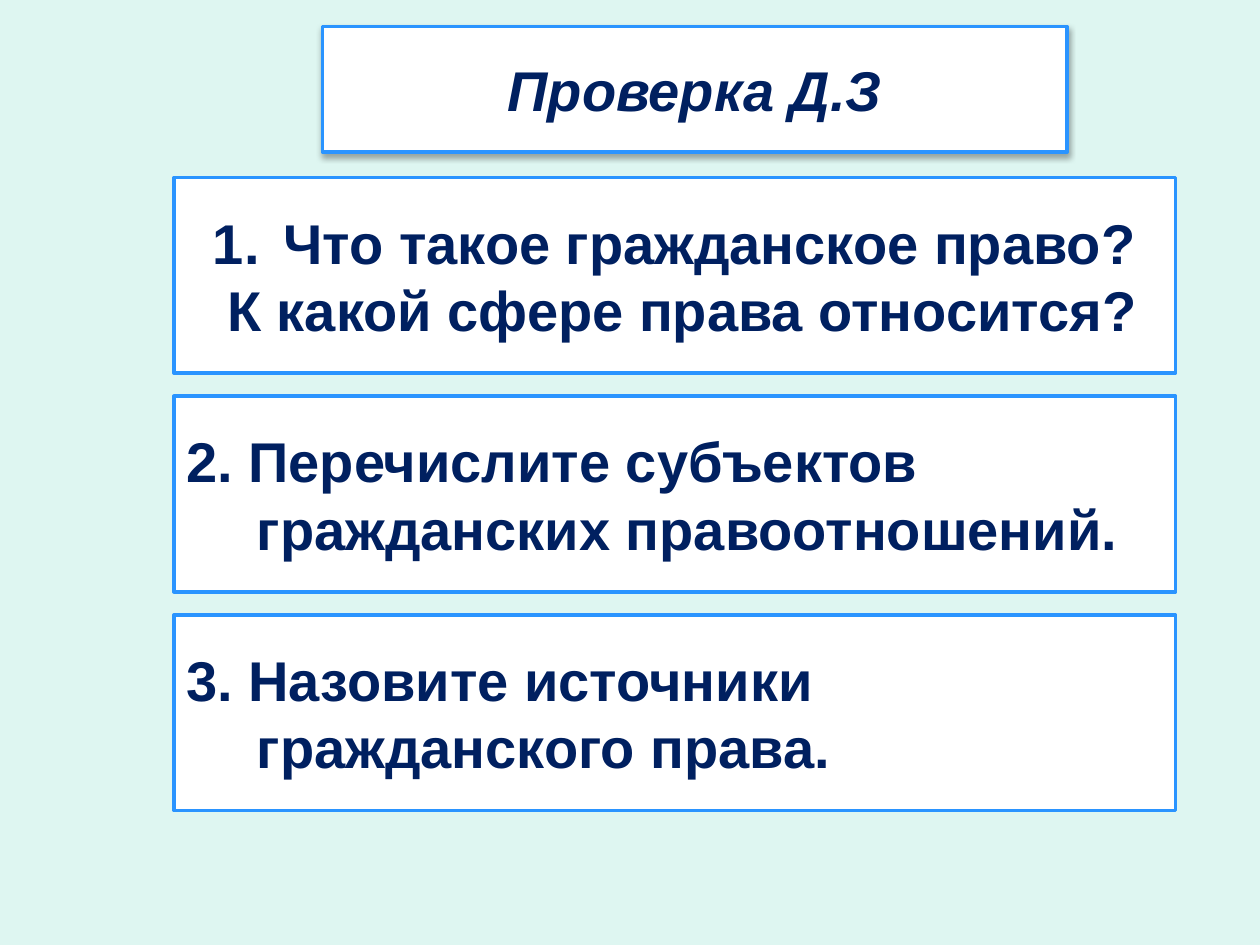
from dataclasses import dataclass
from typing import Any

from lxml.etree import SubElement
from pptx import Presentation
from pptx.dml.color import RGBColor
from pptx.enum.shapes import MSO_SHAPE
from pptx.enum.text import MSO_ANCHOR, MSO_AUTO_SIZE, PP_ALIGN
from pptx.oxml.ns import qn
from pptx.util import Inches, Pt

MINT = RGBColor(0xDE, 0xF6, 0xF1)
WHITE = RGBColor(0xFF, 0xFF, 0xFF)
BLUE = RGBColor(0x2A, 0x94, 0xFF)
NAVY = RGBColor(0x00, 0x20, 0x60)

WIDTH, HEIGHT = Inches(10), Inches(7.5)
LEFT, TOP, WIDE, HIGH = 0.138, 0.188, 0.795, 0.207
STEP = 0.2313
INDENT = Inches(0.56)

FONT = {"name": "Arial", "size": Pt(32), "bold": True}
FRAME = {
    "word_wrap": True,
    "auto_size": MSO_AUTO_SIZE.NONE,
    "vertical_anchor": MSO_ANCHOR.MIDDLE,
}


@dataclass(frozen=True)
class Card:
    lines: tuple[str, ...]
    align: PP_ALIGN = PP_ALIGN.LEFT
    auto: bool = False


CARDS = (
    Card(
        ("Что такое гражданское право?", " К какой сфере права относится?"),
        PP_ALIGN.CENTER,
        True,
    ),
    Card(("2. Перечислите субъектов гражданских правоотношений.",)),
    Card(("3. Назовите источники гражданского права.",)),
)


def apply(target: Any, values: dict[str, Any]) -> None:
    for name, value in values.items():
        setattr(target, name, value)


def place(shape: Any, left: float, top: float, wide: float, high: float) -> None:
    apply(shape, {
        "left": int(WIDTH * left),
        "top": int(HEIGHT * top),
        "width": int(WIDTH * wide),
        "height": int(HEIGHT * high),
    })


def style(shape: Any) -> None:
    shape.fill.solid()
    shape.fill.fore_color.rgb = WHITE
    shape.line.color.rgb = BLUE
    shape.line.width = Pt(2)
    apply(shape.text_frame, FRAME)


def write(para: Any, text: str, align: PP_ALIGN, italic: bool = False) -> None:
    para.alignment = align
    run = para.add_run()
    run.text = text
    apply(run.font, FONT | {"italic": italic})
    run.font.color.rgb = NAVY


def shade(shape: Any) -> None:
    effects = SubElement(shape.element.spPr, qn("a:effectLst"))
    outer = SubElement(
        effects, qn("a:outerShdw"), blurRad=str(Pt(3.5)), dist=str(Pt(2.2)),
        dir="5400000", rotWithShape="0",
    )
    color = SubElement(outer, qn("a:srgbClr"), val="000000")
    SubElement(color, qn("a:alpha"), val="32000")


def draw(slide: Any, card: Card, row: int) -> None:
    shape = slide.shapes.add_shape(MSO_SHAPE.RECTANGLE, 0, 0, 0, 0)
    place(shape, LEFT, TOP + row * STEP, WIDE, HIGH)
    style(shape)
    shape.shadow.inherit = False
    frame = shape.text_frame
    for i, text in enumerate(card.lines):
        para = frame.paragraphs[0] if i == 0 else frame.add_paragraph()
        props = para._p.get_or_add_pPr()
        props.set("marL", str(INDENT))
        props.set("indent", str(-INDENT))
        if card.auto and i == 0:
            SubElement(props, qn("a:buFont"), typeface="Arial")
            SubElement(props, qn("a:buAutoNum"), type="arabicPeriod")
        write(para, text, card.align)


def main() -> None:
    deck = Presentation()
    deck.slide_width, deck.slide_height = WIDTH, HEIGHT
    slide = deck.slides.add_slide(deck.slide_layouts[5])
    slide.background.fill.solid()
    slide.background.fill.fore_color.rgb = MINT
    title = slide.shapes.title
    place(title, 0.256, 0.028, 0.591, 0.133)
    style(title)
    shade(title)
    write(title.text_frame.paragraphs[0], "Проверка Д.З", PP_ALIGN.CENTER, True)
    for row, card in enumerate(CARDS):
        draw(slide, card, row)
    deck.save("out.pptx")


if __name__ == "__main__":
    main()
